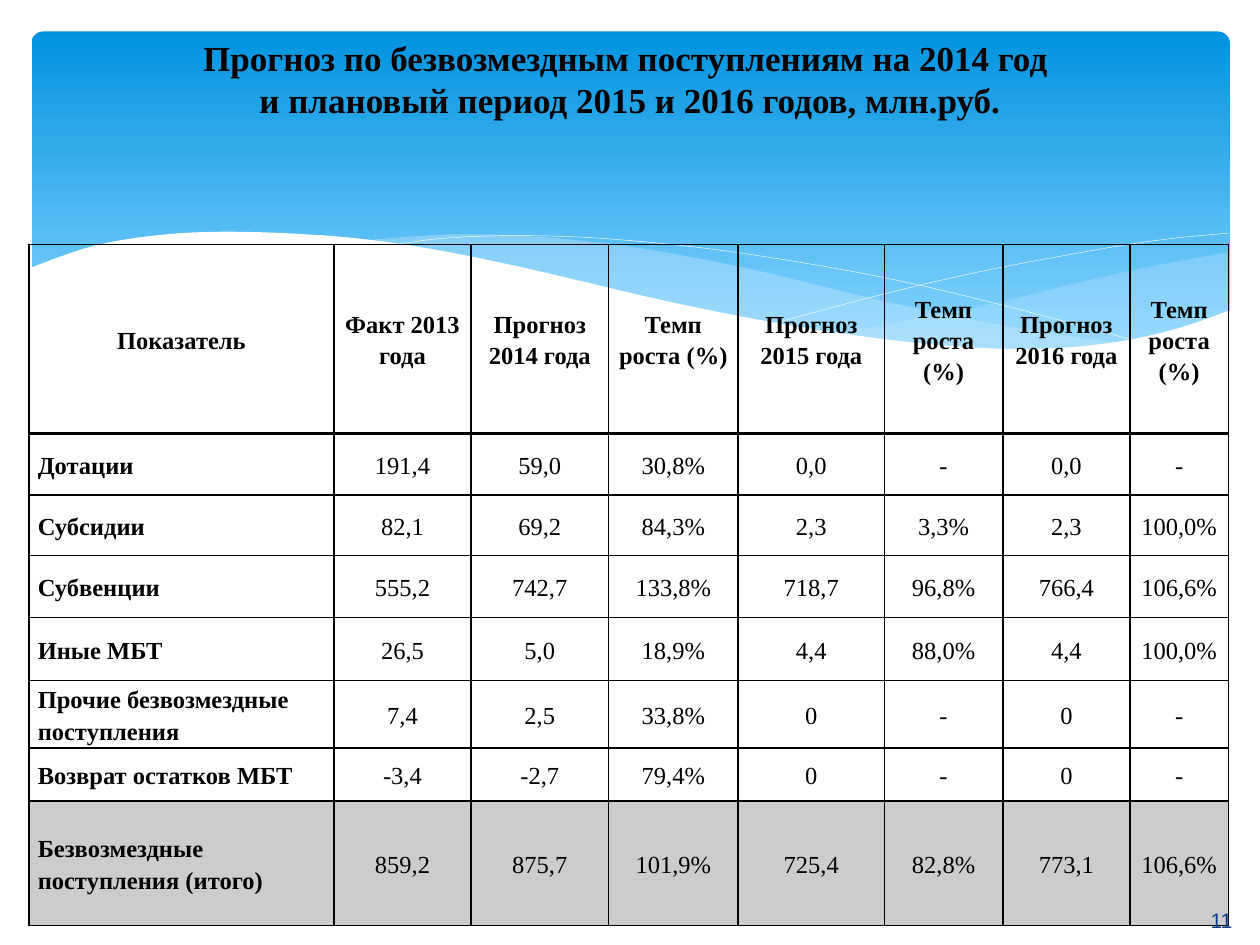
from dataclasses import dataclass
from typing import NamedTuple, Optional

from lxml.etree import SubElement
from pptx import Presentation
from pptx.dml.color import RGBColor
from pptx.enum.shapes import MSO_SHAPE as Shape
from pptx.enum.text import MSO_ANCHOR as Anchor, PP_ALIGN as Align
from pptx.oxml.ns import qn
from pptx.util import Inches, Pt

Point = tuple[float, float]


@dataclass(frozen=True)
class Theme:
    """Colours, fonts and type sizes of the slide."""
    ink: str = "000000"
    paper: str = "FFFFFF"
    sky_top: str = "0293E0"
    sky_bottom: str = "83D3FE"
    mist: str = "C6E7FC"
    number: str = "073E87"
    serif: str = "Times New Roman"
    sans: str = "Arial"
    title_size: int = 20
    table_size: int = 14
    number_size: int = 12
    total_opacity: int = 20


class Box(NamedTuple):
    """A rectangle in grid units, ten columns to the slide width."""
    left: float
    top: float
    width: float
    height: float


class Wave(NamedTuple):
    """A smooth edge, an optional second edge closing it, and its paint."""
    edge: list[Point]
    back: list[Point]
    fill: Optional[str] = None
    opacity: int = 100


THEME = Theme()
UNIT = Inches(1)
COLUMNS = [2.42, 1.09, 1.09, 1.03, 1.16, 0.94, 1.01, 0.78]
ROWS = [1.5, 0.49, 0.48, 0.49, 0.5, 0.49, 0.42, 0.99]
TABLE = [
    ["Показатель", "Факт 2013 года", "Прогноз 2014 года", "Темп роста (%)",
     "Прогноз 2015 года", "Темп роста (%)", "Прогноз 2016 года", "Темп роста (%)"],
    ["Дотации", "191,4", "59,0", "30,8%", "0,0", "-", "0,0", "-"],
    ["Субсидии", "82,1", "69,2", "84,3%", "2,3", "3,3%", "2,3", "100,0%"],
    ["Субвенции", "555,2", "742,7", "133,8%", "718,7", "96,8%", "766,4", "106,6%"],
    ["Иные МБТ", "26,5", "5,0", "18,9%", "4,4", "88,0%", "4,4", "100,0%"],
    ["Прочие безвозмездные поступления", "7,4", "2,5", "33,8%", "0", "-", "0", "-"],
    ["Возврат остатков МБТ", "-3,4", "-2,7", "79,4%", "0", "-", "0", "-"],
    ["Безвозмездные поступления (итого)", "859,2", "875,7", "101,9%", "725,4",
     "82,8%", "773,1", "106,6%"],
]
WAVES = [
    Wave([(9.76, 2), (9.21, 2.1), (8.61, 2.23), (7.79, 2.43), (6.61, 2.65)],
         [(6.61, 2.65), (7.32, 2.74), (8.03, 2.78), (8.72, 2.74), (9.28, 2.64), (9.76, 2.47)],
         THEME.mist, 29),
    Wave([(8.93, 2.73), (8.07, 2.6), (7.06, 2.4), (5.98, 2.14), (5.14, 1.98), (4.41, 1.89),
          (3.61, 1.86), (2.86, 1.91)],
         [(2.86, 1.91), (3.62, 2.03), (4.49, 2.22), (5.66, 2.48), (6.65, 2.66), (7.48, 2.76),
          (8.18, 2.79), (8.93, 2.73)],
         THEME.mist, 40),
    Wave([(3.09, 1.95), (3.53, 1.89), (4.16, 1.87), (4.89, 1.9), (5.82, 2), (6.95, 2.19),
          (7.95, 2.42), (9.07, 2.72)], []),
    Wave([(6.13, 2.57), (6.95, 2.35), (7.76, 2.16), (8.66, 1.99), (9.24, 1.9), (9.75, 1.85)], []),
    Wave([(9.77, 2.46), (9.3, 2.62), (8.75, 2.73), (8.09, 2.77), (7.26, 2.72), (6.26, 2.58),
          (5.29, 2.39), (4.18, 2.13), (3.39, 1.97), (2.71, 1.88), (1.93, 1.84), (1.32, 1.86),
          (0.75, 1.95), (0.23, 2.13)],
         [(0.23, 3.29), (9.77, 3.29)], THEME.paper),
]


def color(value: str) -> RGBColor:
    """Turn a hex string into a colour."""
    return RGBColor.from_string(value)


def paint(fill, properties, value: str, opacity: int = 100) -> None:
    """Fill with one colour at the given opacity in per cent."""
    fill.solid()
    fill.fore_color.rgb = color(value)
    if opacity < 100:
        source = properties.find(qn("a:solidFill")).find(qn("a:srgbClr"))
        SubElement(source, qn("a:alpha"), val=str(opacity * 1000))


def smooth(knots: list[Point], steps: int = 6) -> list[Point]:
    """Pass a Catmull-Rom curve through the knots."""
    padded = [knots[0], *knots, knots[-1]]
    curve = [knots[0]]
    for a, b, c, d in zip(padded, padded[1:], padded[2:], padded[3:]):
        for step in range(1, steps + 1):
            t = step / steps
            curve.append(tuple(
                (2 * q + (r - p) * t + (2 * p - 5 * q + 4 * r - s) * t ** 2
                 + (3 * q - p - 3 * r + s) * t ** 3) / 2
                for p, q, r, s in zip(a, b, c, d)))
    return curve


def scaled(box: Box) -> list[int]:
    """Convert a box from grid units."""
    return [round(length * UNIT) for length in box]


def add_wave(slide, wave: Wave) -> None:
    """Draw a filled wave, or a white hairline when it has no fill."""
    outline = smooth(wave.edge) + (smooth(wave.back) if wave.back else [])
    points = [(round(x * UNIT), round(y * UNIT)) for x, y in outline]
    builder = slide.shapes.build_freeform(*points[0])
    builder.add_line_segments(points[1:], close=bool(wave.back))
    shape = builder.convert_to_shape()
    shape.shadow.inherit = False
    if wave.fill:
        paint(shape.fill, shape._element.spPr, wave.fill, wave.opacity)
        shape.line.fill.background()
    else:
        shape.fill.background()
        shape.line.color.rgb = color(THEME.paper)
        shape.line.width = Pt(0.25)


def add_sky(slide, box: Box) -> None:
    """Draw the rounded gradient panel."""
    shape = slide.shapes.add_shape(Shape.ROUNDED_RECTANGLE, *scaled(box))
    shape.adjustments[0] = 0.034
    shape.shadow.inherit = False
    shape.line.fill.background()
    shape.fill.gradient()
    shape.fill.gradient_angle = 270
    stops = [(0, THEME.sky_top), (0.9, THEME.sky_bottom)]
    for stop, (position, value) in zip(shape.fill.gradient_stops, stops):
        stop.position = position
        stop.color.rgb = color(value)


def add_run(paragraph, text: str, size: int, font: str, value: str, bold: bool = False) -> None:
    """Append one formatted run."""
    run = paragraph.add_run()
    run.text = text
    run.font.size, run.font.name, run.font.bold = Pt(size), font, bold
    run.font.color.rgb = color(value)


def add_label(slide, box: Box, lines: list[str], size: int, font: str, value: str,
              bold: bool = False) -> None:
    """Add a centred text box with line breaks between its lines."""
    frame = slide.shapes.add_textbox(*scaled(box)).text_frame
    frame.word_wrap, frame.vertical_anchor = True, Anchor.MIDDLE
    paragraph = frame.paragraphs[0]
    paragraph.alignment = Align.CENTER
    for index, line in enumerate(lines):
        if index:
            paragraph.add_line_break()
        add_run(paragraph, line, size, font, value, bold)


def add_borders(cell, top: int, bottom: int) -> None:
    """Put black lines round a cell, with widths in points."""
    properties = cell._tc.get_or_add_tcPr()
    widths = {"a:lnL": 1, "a:lnR": 1, "a:lnT": top, "a:lnB": bottom}
    for index, (tag, width) in enumerate(widths.items()):
        line = SubElement(properties, qn(tag), w=str(Pt(width)))
        SubElement(SubElement(line, qn("a:solidFill")), qn("a:srgbClr"), val=THEME.ink)
        properties.insert(index, line)


def add_forecast(slide, box: Box) -> None:
    """Add the table of receipts with its shaded total row."""
    table = slide.shapes.add_table(len(ROWS), len(COLUMNS), *scaled(box)).table
    table.first_row = table.horz_banding = False
    for column, width in zip(table.columns, COLUMNS):
        column.width = Inches(width)
    for r, (row, height, texts) in enumerate(zip(table.rows, ROWS, TABLE)):
        row.height = Inches(height)
        for c, (cell, text) in enumerate(zip(row.cells, texts)):
            cell.vertical_anchor = Anchor.MIDDLE
            cell.margin_left = cell.margin_right = Inches(0.07)
            cell.margin_top = cell.margin_bottom = 0
            if r == len(ROWS) - 1:
                paint(cell.fill, cell._tc.tcPr, THEME.ink, THEME.total_opacity)
            else:
                cell.fill.background()
            add_borders(cell, 2 if r == 1 else 1, 2 if r == 0 else 1)
            paragraph = cell.text_frame.paragraphs[0]
            paragraph.line_spacing = 1.15
            paragraph.alignment = Align.LEFT if r and c == 0 else Align.CENTER
            add_run(paragraph, text, THEME.table_size, THEME.serif, THEME.ink, r == 0 or c == 0)


def main() -> None:
    """Build the slide and save it."""
    presentation = Presentation()
    presentation.slide_width, presentation.slide_height = 10 * UNIT, round(7.5 * UNIT)
    slide = presentation.slides.add_slide(presentation.slide_layouts[6])
    add_sky(slide, Box(0.25, 0.25, 9.51, 2.7))
    for wave in WAVES:
        add_wave(slide, wave)
    add_label(slide, Box(0, 0, 10, 1.25),
              ["Прогноз по безвозмездным поступлениям на 2014 год ",
               "и плановый период 2015 и 2016 годов, млн.руб."],
              THEME.title_size, THEME.serif, THEME.ink, True)
    add_forecast(slide, Box(0.23, 1.94, sum(COLUMNS), sum(ROWS)))
    add_label(slide, Box(9.06, 7.1, 1.27, 0.4), ["11"],
              THEME.number_size, THEME.sans, THEME.number)
    presentation.save("out.pptx")


if __name__ == "__main__":
    main()
